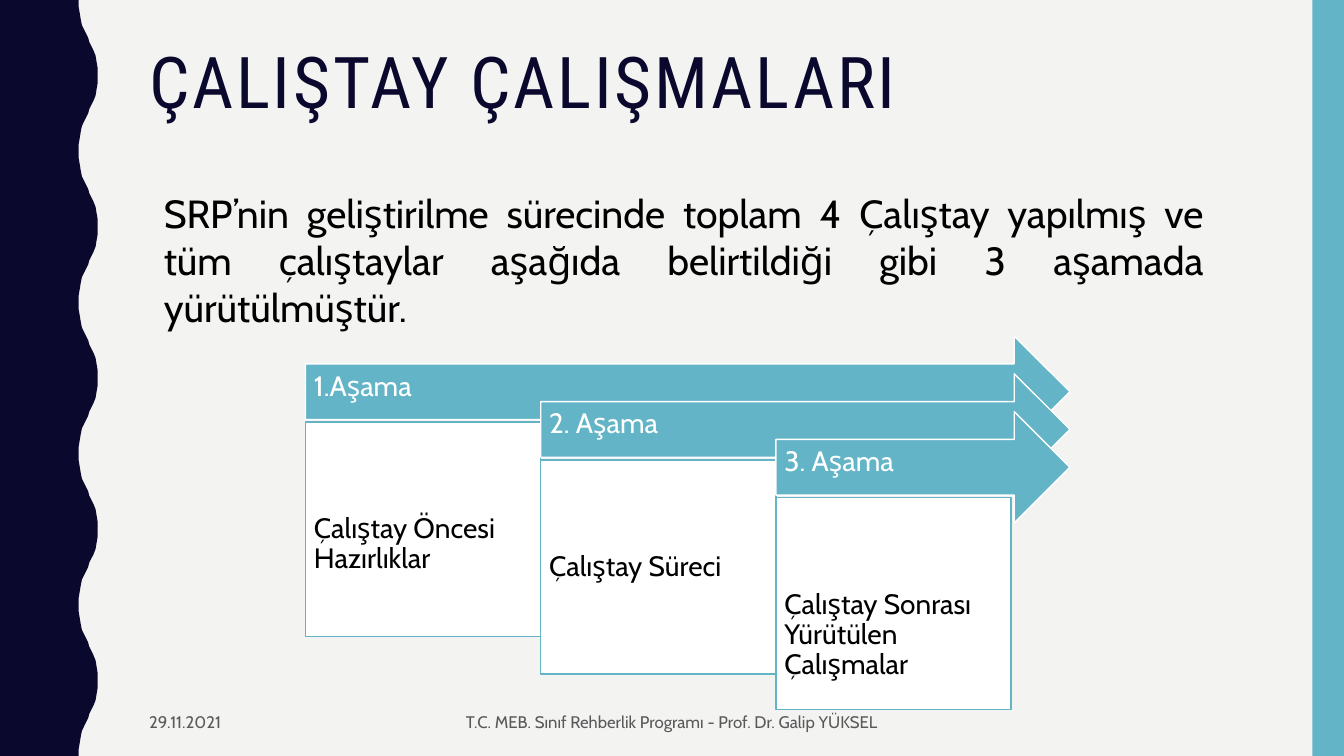
"""Build the slide about the three workshop stages."""
from lxml import etree
from pptx import Presentation
from pptx.dml.color import RGBColor
from pptx.enum.shapes import MSO_SHAPE
from pptx.enum.text import MSO_ANCHOR, MSO_AUTO_SIZE, PP_ALIGN
from pptx.util import Emu, Pt

EMU_PER_PX = 9525
SLIDE_WIDTH, SLIDE_HEIGHT = 1280, 720
RECTANGLE, RIGHT_ARROW = MSO_SHAPE.RECTANGLE, MSO_SHAPE.RIGHT_ARROW
TOP, MIDDLE = MSO_ANCHOR.TOP, MSO_ANCHOR.MIDDLE
LEFT, CENTER, JUSTIFY = PP_ALIGN.LEFT, PP_ALIGN.CENTER, PP_ALIGN.JUSTIFY
GROW = MSO_AUTO_SIZE.SHAPE_TO_FIT_TEXT
BODY_FONT, TITLE_FONT = "Cabin", "Roboto Condensed"
COLORS = {
    "background": "F3F3F2",
    "navy": "0B082E",
    "teal": "62B4C6",
    "white": "FFFFFF",
    "black": "000000",
    "gray": "595959",
}
WAVE_LENGTH = 144
WAVE_RISE = [
    (75, 0), (75, 7), (76, 13), (77, 19), (78, 24), (80, 28), (82, 32),
    (84, 36), (85, 40), (87, 44), (89, 48), (91, 53), (92, 59), (93, 65),
]
STAGES = [
    ("1.Aşama", "Çalıştay Öncesi Hazırlıklar", 204),
    ("2. Aşama", "Çalıştay Süreci", 204),
    ("3. Aşama", "Çalıştay Sonrası Yürütülen Çalışmalar", 202),
]
STAGE_LEFT, STAGE_TOP, STAGE_RIGHT = 291, 320, 1019
STAGE_WIDTH, STAGE_DROP = 224, 36
ARROW_HEIGHT, BOX_OFFSET = 106, 82


def px(length):
    """Turn pixels into EMU."""
    return Emu(length * EMU_PER_PX)


def color(name):
    """Return the named colour."""
    return RGBColor.from_string(COLORS[name])


def paint(shape, fill, line=None):
    """Set the fill and outline of a shape and drop its shadow."""
    shape.shadow.inherit = False
    shape.fill.solid()
    shape.fill.fore_color.rgb = color(fill)
    if line:
        shape.line.color.rgb = color(line)
        shape.line.width = Pt(1)
    else:
        shape.line.fill.background()


def write(shape, text, size, text_color, font=BODY_FONT, align=LEFT,
          anchor=TOP, insets=(10, 5, 10, 5), spacing=1.0):
    """Write one formatted paragraph into a shape and return the paragraph."""
    frame = shape.text_frame
    frame.text = text
    frame.word_wrap = True
    frame.vertical_anchor = anchor
    (frame.margin_left, frame.margin_top,
     frame.margin_right, frame.margin_bottom) = map(px, insets)
    paragraph = frame.paragraphs[0]
    paragraph.alignment = align
    paragraph.line_spacing = spacing
    for run in paragraph.runs:
        run.font.size = Pt(size)
        run.font.name = font
        run.font.color.rgb = color(text_color)
    return paragraph


def add_text(slide, bounds, *args, **options):
    """Add a text box and return it."""
    box = slide.shapes.add_textbox(*map(px, bounds))
    write(box, *args, **options)
    return box


def add_shape(slide, kind, bounds, fill, line=None):
    """Add a painted preset shape and return it."""
    shape = slide.shapes.add_shape(kind, *map(px, bounds))
    paint(shape, fill, line)
    return shape


def add_wave(slide):
    """Add the wavy band on the left edge."""
    fall = [(x, WAVE_LENGTH - y) for x, y in reversed(WAVE_RISE)]
    period = WAVE_RISE + [(93, WAVE_LENGTH // 2)] + fall
    points = [(x, y + start) for start in range(0, SLIDE_HEIGHT, WAVE_LENGTH)
              for x, y in period]
    builder = slide.shapes.build_freeform(0, 0, scale=EMU_PER_PX)
    builder.add_line_segments(points + [(0, SLIDE_HEIGHT)], close=True)
    paint(builder.convert_to_shape(), "navy")


def add_stage(slide, index, label, description, box_height):
    """Add the arrow and the box of one stage."""
    left = STAGE_LEFT + index * STAGE_WIDTH
    top = STAGE_TOP + index * STAGE_DROP
    arrow = add_shape(slide, RIGHT_ARROW,
                      (left, top, STAGE_RIGHT - left, ARROW_HEIGHT),
                      "teal", "white")
    write(arrow, label, 20, "white", anchor=MIDDLE,
          insets=(8, 8, 27, 17), spacing=0.9)
    box = add_shape(slide, RECTANGLE,
                    (left, top + BOX_OFFSET, STAGE_WIDTH, box_height),
                    "white", "teal")
    write(box, description, 20, "black", insets=(8, 88, 8, 8), spacing=0.9)


def add_title(slide):
    """Add the letter-spaced title."""
    box = add_text(slide, (132, 40, 1068, 97), "ÇALIŞTAY ÇALIŞMALARI", 51,
                   "navy", font=TITLE_FONT, spacing=0.9)
    for properties in etree.ETXPath(
            "//{http://schemas.openxmlformats.org/drawingml/2006/main}rPr"
    )(box.text_frame.paragraphs[0].runs[0].font._element):
        if properties.get("sz") == "5100":
            properties.set("spc", "200")


def main():
    """Build and save the presentation."""
    presentation = Presentation()
    presentation.slide_width = px(SLIDE_WIDTH)
    presentation.slide_height = px(SLIDE_HEIGHT)
    slide = presentation.slides.add_slide(presentation.slide_layouts[6])
    slide.background.fill.solid()
    slide.background.fill.fore_color.rgb = color("background")
    add_wave(slide)
    add_shape(slide, RECTANGLE, (1250, 0, 30, SLIDE_HEIGHT), "teal")
    add_title(slide)
    for index, stage in enumerate(STAGES):
        add_stage(slide, index, *stage)
    add_text(slide, (132, 669, 245, 36), "29.11.2021", 12, "gray",
             anchor=MIDDLE)
    add_text(slide, (424, 669, 432, 36),
             "T.C. MEB. Sınıf Rehberlik Programı - Prof. Dr. Galip YÜKSEL",
             12, "gray", align=CENTER, anchor=MIDDLE)
    introduction = add_text(
        slide, (146, 175, 1010, 100),
        "SRP’nin geliştirilme sürecinde toplam 4 Çalıştay yapılmış ve tüm "
        "çalıştaylar aşağıda belirtildiği gibi 3 aşamada yürütülmüştür.",
        28, "black", align=JUSTIFY)
    introduction.text_frame.auto_size = GROW
    presentation.save("out.pptx")


if __name__ == "__main__":
    main()
